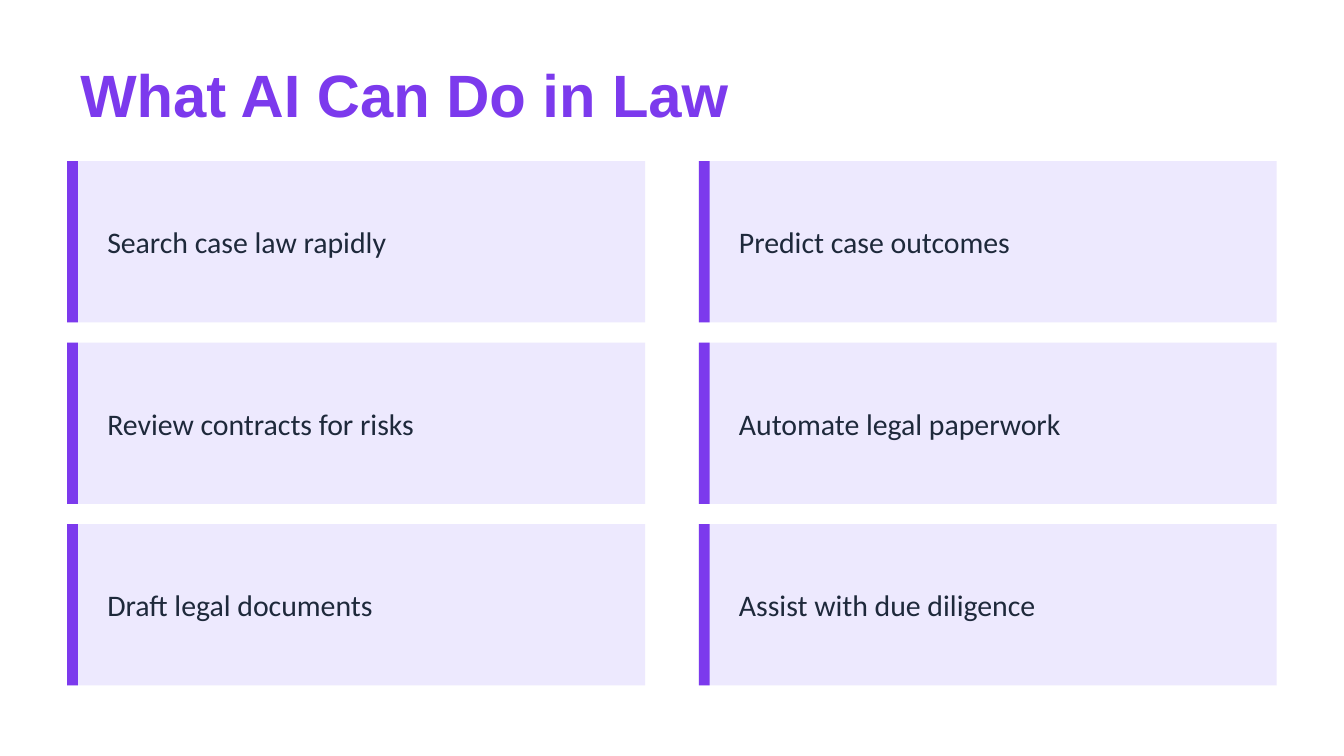
from pptx import Presentation
from pptx.dml.color import RGBColor
from pptx.enum.shapes import MSO_SHAPE as Shape
from pptx.enum.text import MSO_ANCHOR as Anchor
from pptx.util import Emu, Pt

PX = 4572  # EMU per px, 200 px to the inch
COLORS = {"background": "FFFFFF", "accent": "7C3AED", "card": "EDE9FE", "ink": "1E293B"}

COLUMNS = [
    ["Search case law rapidly", "Review contracts for risks", "Draft legal documents"],
    ["Predict case outcomes", "Automate legal paperwork", "Assist with due diligence"],
]


def px(*lengths):
    return [Emu(length * PX) for length in lengths]


def color(name):
    return RGBColor.from_string(COLORS[name])


def add_text(slide, box, text, *, size, font, fill, bold=False):
    frame = slide.shapes.add_textbox(*px(*box)).text_frame
    frame.word_wrap = True
    frame.vertical_anchor = Anchor.MIDDLE
    paragraph = frame.paragraphs[0]
    run = paragraph.add_run()
    run.text = text
    run.font.name = font
    run.font.size = Pt(size)
    run.font.bold = bold
    run.font.color.rgb = color(fill)


def add_block(slide, box, fill):
    shape = slide.shapes.add_shape(Shape.RECTANGLE, *px(*box))
    shape.shadow.inherit = False
    shape.fill.solid()
    shape.fill.fore_color.rgb = color(fill)
    shape.line.fill.background()


def add_card(slide, box, text):
    left, top, width, height = box
    # Panel with accent bar on its left edge
    add_block(slide, box, "card")
    add_block(slide, (left, top, 16, height), "accent")
    # Label
    add_text(slide, (left + 40, top + 30, width - 80, height - 60), text,
             size=16, font="Calibri", fill="ink")


def add_card_grid(slide, box, columns, column_gap, row_gap):
    left, top, width, height = box
    rows = len(columns[0])
    card_width = (width - column_gap * (len(columns) - 1)) // len(columns)
    card_height = (height - row_gap * (rows - 1)) // rows
    for column, labels in enumerate(columns):
        for row, label in enumerate(labels):
            card = (left + column * (card_width + column_gap),
                    top + row * (card_height + row_gap), card_width, card_height)
            add_card(slide, card, label)


def main():
    presentation = Presentation()
    presentation.slide_width, presentation.slide_height = px(2000, 1125)
    slide = presentation.slides.add_slide(presentation.slide_layouts[6])
    slide.background.fill.solid()
    slide.background.fill.fore_color.rgb = color("background")

    # Title
    add_text(slide, (100, 80, 1800, 120), "What AI Can Do in Law",
             size=32, font="Arial", fill="accent", bold=True)
    # Capability cards
    add_card_grid(slide, (100, 240, 1800, 780), COLUMNS, column_gap=80, row_gap=30)

    presentation.save("out.pptx")


if __name__ == "__main__":
    main()
